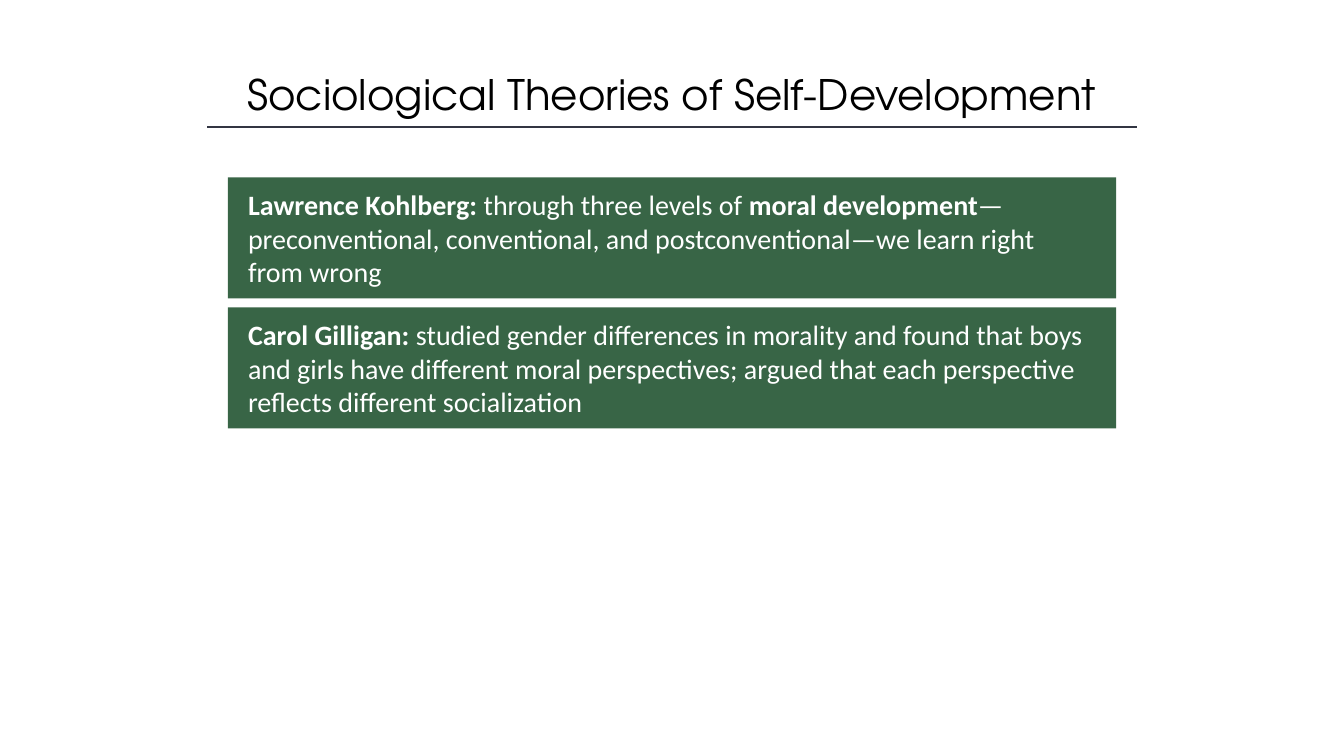
from pptx import Presentation
from pptx.dml.color import RGBColor
from pptx.enum.shapes import MSO_CONNECTOR, MSO_SHAPE
from pptx.enum.text import MSO_ANCHOR, PP_ALIGN
from pptx.oxml.ns import qn
from pptx.util import Inches, Pt
from lxml import etree

STRAIGHT, RECTANGLE = MSO_CONNECTOR.STRAIGHT, MSO_SHAPE.RECTANGLE
TOP, MIDDLE = MSO_ANCHOR.TOP, MSO_ANCHOR.MIDDLE
LEFT, CENTER = PP_ALIGN.LEFT, PP_ALIGN.CENTER

THEME = {
    "panel": RGBColor.from_string("386546"),
    "rule": RGBColor.from_string("323542"),
    "title": {"name": "TeX Gyre Adventor", "size": Pt(30),
              "color": RGBColor.from_string("000000")},
    "body": {"name": "Calibri", "size": Pt(20),
             "color": RGBColor.from_string("FFFFFF")},
}

HEADING = "Sociological Theories of Self-Development"
# Each theorist: (text, bold) runs
THEORISTS = [
    [("Lawrence Kohlberg: ", True),
     ("through three levels of ", False),
     ("moral development", True),
     ("—preconventional, conventional, and postconventional—"
      "we learn right from wrong", False)],
    [("Carol Gilligan: ", True),
     ("studied gender differences in morality and found that boys and girls "
      "have different moral perspectives; argued that each perspective "
      "reflects different socialization", False)],
]

# Layout in inches
SLIDE_W, SLIDE_H = 13.33, 7.5
TITLE_W, RULE_W, PANEL_W = 10, 9.22, 8.81
TITLE_TOP, TITLE_H, RULE_Y = 0.63, 0.61, 1.26
PANEL_TOP, PANEL_H, PANEL_PITCH = 1.76, 1.2, 1.29


def write(frame, runs, style, align, **layout):
    for setting, value in {"word_wrap": True, **layout}.items():
        setattr(frame, setting, value)
    paragraph = frame.paragraphs[0]
    paragraph.alignment = align
    for text, bold in runs:
        run = paragraph.add_run()
        run.text = text
        run.font.name, run.font.size = style["name"], style["size"]
        run.font.color.rgb = style["color"]
        run.font.bold = bold


deck = Presentation()
deck.slide_width, deck.slide_height = Inches(SLIDE_W), Inches(SLIDE_H)
slide = deck.slides.add_slide(deck.slide_layouts[6])

# Heading
heading = slide.shapes.add_textbox(Inches((SLIDE_W - TITLE_W) / 2), Inches(TITLE_TOP),
                                   Inches(TITLE_W), Inches(TITLE_H))
write(heading.text_frame, [(HEADING, False)], THEME["title"], CENTER,
      vertical_anchor=TOP)

# Rule under the heading
rule_left = (SLIDE_W - RULE_W) / 2
rule = slide.shapes.add_connector(STRAIGHT, Inches(rule_left), Inches(RULE_Y),
                                  Inches(rule_left + RULE_W), Inches(RULE_Y))
rule.line.color.rgb = THEME["rule"]
rule.line.width = Pt(1)
etree.SubElement(rule.element.spPr, qn("a:effectLst"))

# One panel per theorist
for row, runs in enumerate(THEORISTS):
    panel = slide.shapes.add_shape(RECTANGLE, Inches((SLIDE_W - PANEL_W) / 2),
                                   Inches(PANEL_TOP + row * PANEL_PITCH),
                                   Inches(PANEL_W), Inches(PANEL_H))
    panel.shadow.inherit = False
    panel.fill.solid()
    panel.fill.fore_color.rgb = THEME["panel"]
    panel.line.fill.background()
    write(panel.text_frame, runs, THEME["body"], LEFT, vertical_anchor=MIDDLE,
          margin_left=Inches(0.2), margin_right=Inches(0.27))

deck.save("out.pptx")
